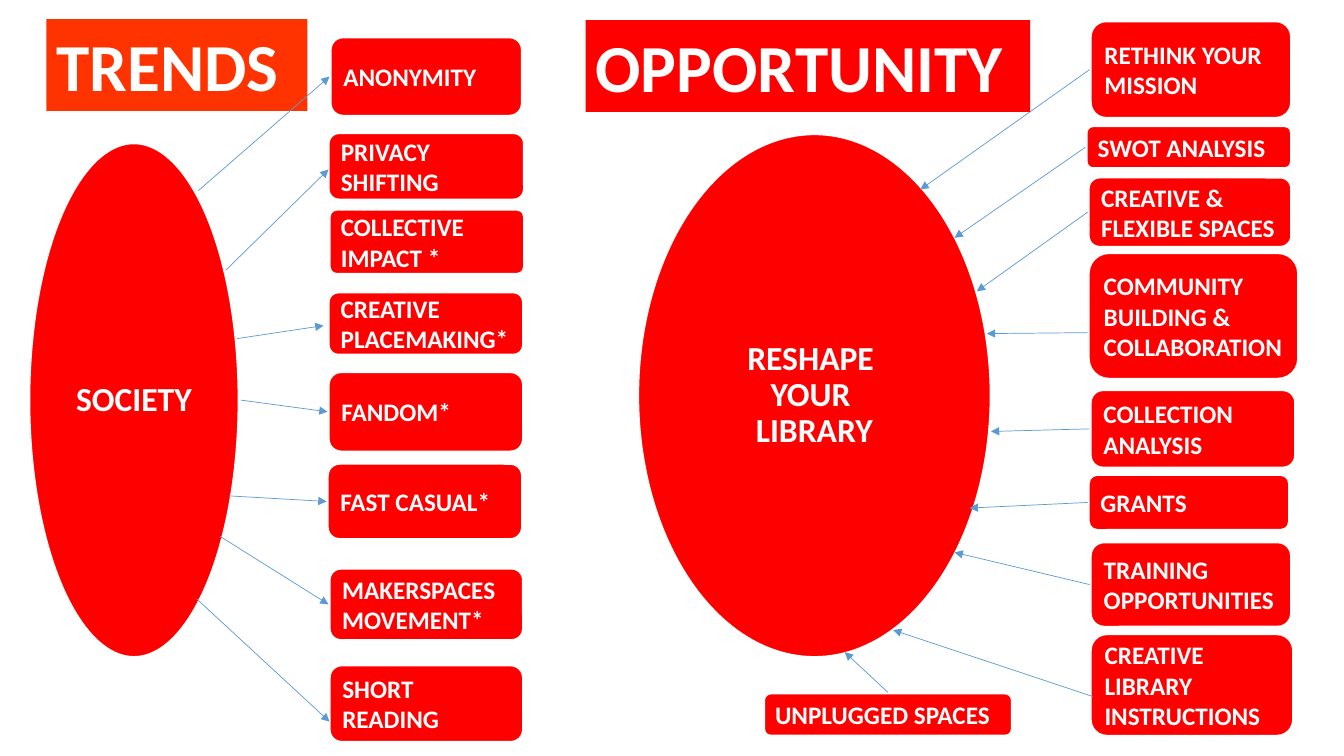
"""Build a slide that maps social trends to library opportunities."""
import dataclasses

import lxml.etree
import pptx
import pptx.dml.color
import pptx.enum.shapes
import pptx.enum.text
import pptx.oxml.ns
import pptx.util

Pt = pptx.util.Pt
qn = pptx.oxml.ns.qn
SHAPE = pptx.enum.shapes.MSO_SHAPE
ALIGN = pptx.enum.text.PP_ALIGN
ANCHOR = pptx.enum.text.MSO_ANCHOR
TOP, LEFT = 0, 1


@dataclasses.dataclass(frozen=True)
class Theme:
    """Hold the colours, font and type sizes."""
    red: str = "FF0000"
    orange: str = "FF3300"
    white: str = "FFFFFF"
    blue: str = "5B9BD5"
    font: str = "Calibri"
    head: int = 48
    hub: int = 24
    card: int = 18


THEME = Theme()

TRENDS = [
    ("ANONYMITY", (235.4, 25.9, 138.2, 57.6), (141.8, 136.1), LEFT),
    ("PRIVACY SHIFTING", (234, 94.3, 141.1, 49), (161.3, 193), (234.7, 121)),
    ("COLLECTIVE IMPACT *", (234.7, 149, 140.4, 47.5), None, None),
    ("CREATIVE PLACEMAKING*", (234, 208.1, 140.4, 46.1), (169.2, 241.9), (231.1, 232.6)),
    ("FANDOM*", (234, 265, 140.4, 58.3), (172.1, 285.8), LEFT),
    ("FAST CASUAL*", (233.3, 330.5, 140.4, 55.4), (163.4, 354.2), LEFT),
    ("MAKERSPACES MOVEMENT*", (234.7, 405.4, 139.7, 52.6), (157, 383), LEFT),
    ("SHORT READING", (234.7, 474.5, 139.7, 56.2), (140.4, 427.7), (235.4, 515.5)),
]
CHANCES = [
    ("RETHINK YOUR MISSION", (778.3, 14.4, 144.7, 70.6), (657.4, 135.4), LEFT),
    ("SWOT ANALYSIS", (775.4, 89.3, 147.6, 31.7), (681.8, 169.9), LEFT),
    ("CREATIVE & FLEXIBLE SPACES", (776.9, 126, 146.2, 51.1), (697.7, 208.1), LEFT),
    ("COMMUNITY BUILDING & COLLABORATION", (776.9, 180, 151.2, 91.4),
     (704.9, 238.3), (776.9, 237.6)),
    ("COLLECTION ANALYSIS", (778.3, 277.9, 147.6, 56.9), (707.8, 308.2), LEFT),
    ("GRANTS", (776.9, 338.4, 144.7, 41), (692.6, 362.9), LEFT),
    ("TRAINING OPPORTUNITIES", (778.3, 386.6, 144.7, 61.9), (681.8, 394.6), LEFT),
    ("CREATIVE LIBRARY INSTRUCTIONS", (778.3, 452.2, 146.2, 74.2),
     (637.9, 450), (780.5, 497.5)),
    ("UNPLUGGED SPACES", (545, 494.6, 178.6, 31.7), (603.4, 465.8), TOP),
]


def tint(code):
    """Turn a hex code into a colour."""
    return pptx.dml.color.RGBColor.from_string(code)


def place(shape, box):
    """Move and size a shape."""
    shape.left, shape.top, shape.width, shape.height = map(Pt, box)


def paint(shape, fill, edge=0):
    """Fill a shape and give it a white edge or none."""
    shape.fill.solid()
    shape.fill.fore_color.rgb = tint(fill)
    if edge:
        shape.line.color.rgb = tint(THEME.white)
        shape.line.width = Pt(edge)
    else:
        shape.line.fill.background()


def write(shape, text, size, anchor=ANCHOR.MIDDLE, align=ALIGN.LEFT):
    """Write one bold white paragraph and return it."""
    frame = shape.text_frame
    frame.word_wrap = True
    frame.auto_size = pptx.enum.text.MSO_AUTO_SIZE.NONE
    frame.vertical_anchor = anchor
    para = frame.paragraphs[0]
    para.text = text
    para.alignment = align
    for part in (para, *para.runs):
        font = part.font
        font.name, font.size, font.bold = THEME.font, Pt(size), True
        font.color.rgb = tint(THEME.white)
    return para


def draw(slide, kind, box):
    """Add a preset shape without shadow."""
    shape = slide.shapes.add_shape(kind, *map(Pt, box))
    shape.shadow.inherit = False
    return shape


def banner(shape, text, fill):
    """Style a shape as a column heading."""
    paint(shape, fill)
    write(shape, text, THEME.head, ANCHOR.TOP)


def hub(shape, text):
    """Style an ellipse as the centre of a column."""
    paint(shape, THEME.red, 4.5)
    para = write(shape, text, THEME.hub, align=ALIGN.CENTER)
    para.line_spacing = 0.9
    para.space_before = Pt(10)
    return para


def body(slide, text, box):
    """Turn the body placeholder into an unbulleted ellipse hub."""
    shape = slide.placeholders[1]
    place(shape, box)
    form = lxml.etree.SubElement(shape.element.spPr, qn("a:prstGeom"), prst="ellipse")
    lxml.etree.SubElement(form, qn("a:avLst"))
    props = hub(shape, text)._p.get_or_add_pPr()
    props.set("marL", "0")
    props.set("indent", "0")
    none = lxml.etree.SubElement(props, qn("a:buNone"))
    props.insert_element_before(none, "a:tabLst", "a:defRPr", "a:extLst")


def card(slide, text, box):
    """Add a rounded card."""
    shape = draw(slide, SHAPE.ROUNDED_RECTANGLE, box)
    paint(shape, THEME.red, 3)
    write(shape, text, THEME.card)
    return shape


def arrow(slide, start, stop):
    """Add a thin arrow between two points."""
    kind = pptx.enum.shapes.MSO_CONNECTOR.STRAIGHT
    line = slide.shapes.add_connector(kind, *map(Pt, start + stop))
    line.line.color.rgb = tint(THEME.blue)
    line.line.width = Pt(0.5)
    lxml.etree.SubElement(line.get_or_add_ln(), qn("a:tailEnd"), type="triangle")
    lxml.etree.SubElement(line.element.spPr, qn("a:effectLst"))
    return line


def column(slide, rows, inward):
    """Add cards with arrows between each card and its hub."""
    for text, box, far, near in rows:
        shape = card(slide, text, box)
        if far is None:
            shape.adjustments[0] = 0.12
            continue
        glued = isinstance(near, int)
        point = box[:2] if glued else near
        line = arrow(slide, point, far) if inward else arrow(slide, far, point)
        if glued:
            join = line.begin_connect if inward else line.end_connect
            join(shape, near)


def main():
    """Build and save the slide."""
    deck = pptx.Presentation()
    deck.slide_width, deck.slide_height = Pt(960), Pt(540)
    slide = deck.slides.add_slide(deck.slide_layouts[1])
    title = slide.shapes.title
    place(title, (33.1, 13.7, 186.5, 65.5))
    banner(title, "TRENDS", THEME.orange)
    body(slide, "SOCIETY", (19.4, 100.8, 152.6, 370.1))
    column(slide, TRENDS, inward=False)
    oval = draw(slide, SHAPE.OVAL, (454.3, 94.3, 254.9, 376.6))
    hub(oval, "RESHAPE \nYOUR \nLIBRARY")
    column(slide, CHANCES, inward=True)
    head = draw(slide, SHAPE.RECTANGLE, (418.3, 14.4, 317.5, 65.5))
    banner(head, "OPPORTUNITY", THEME.red)
    deck.save("out.pptx")


if __name__ == "__main__":
    main()
